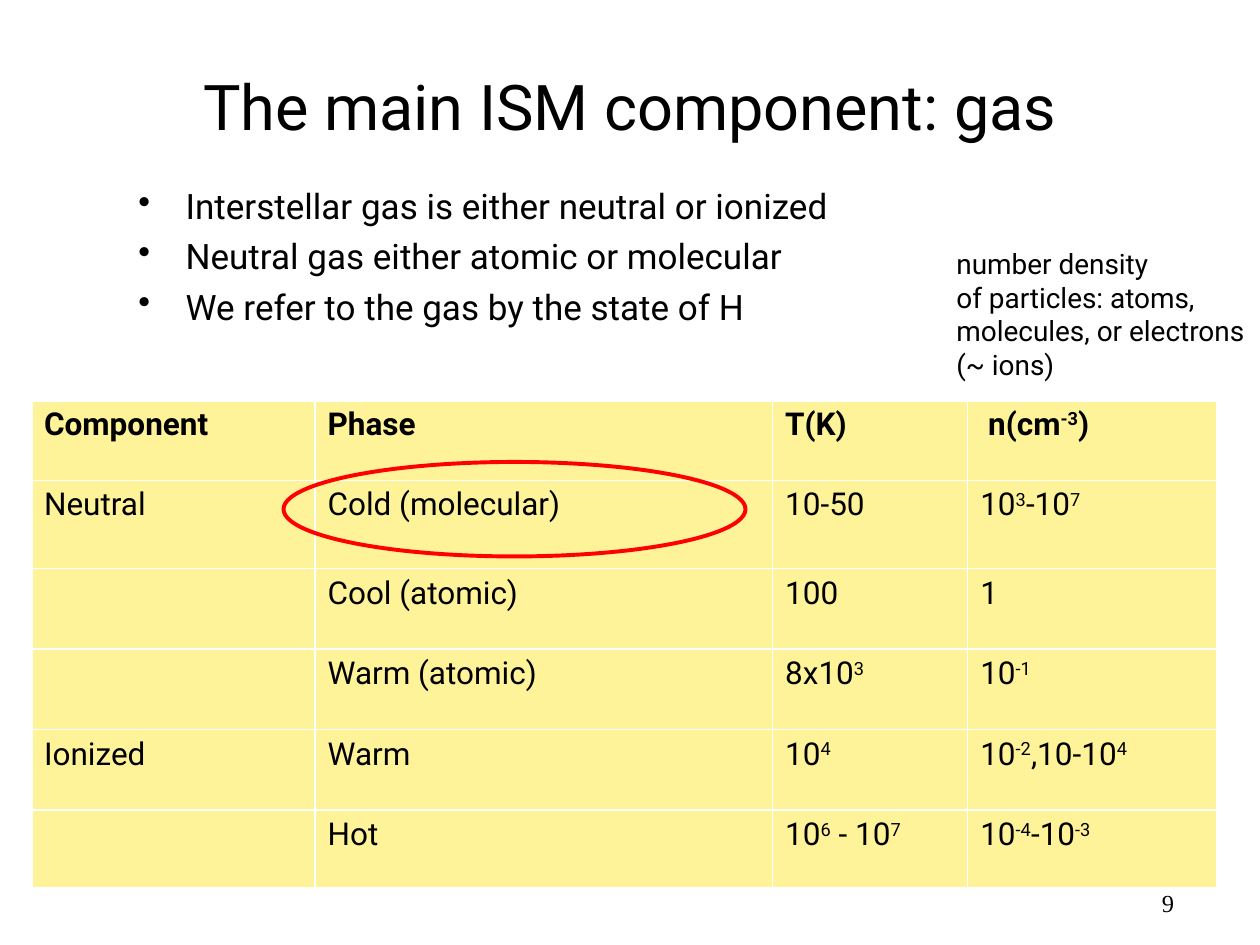
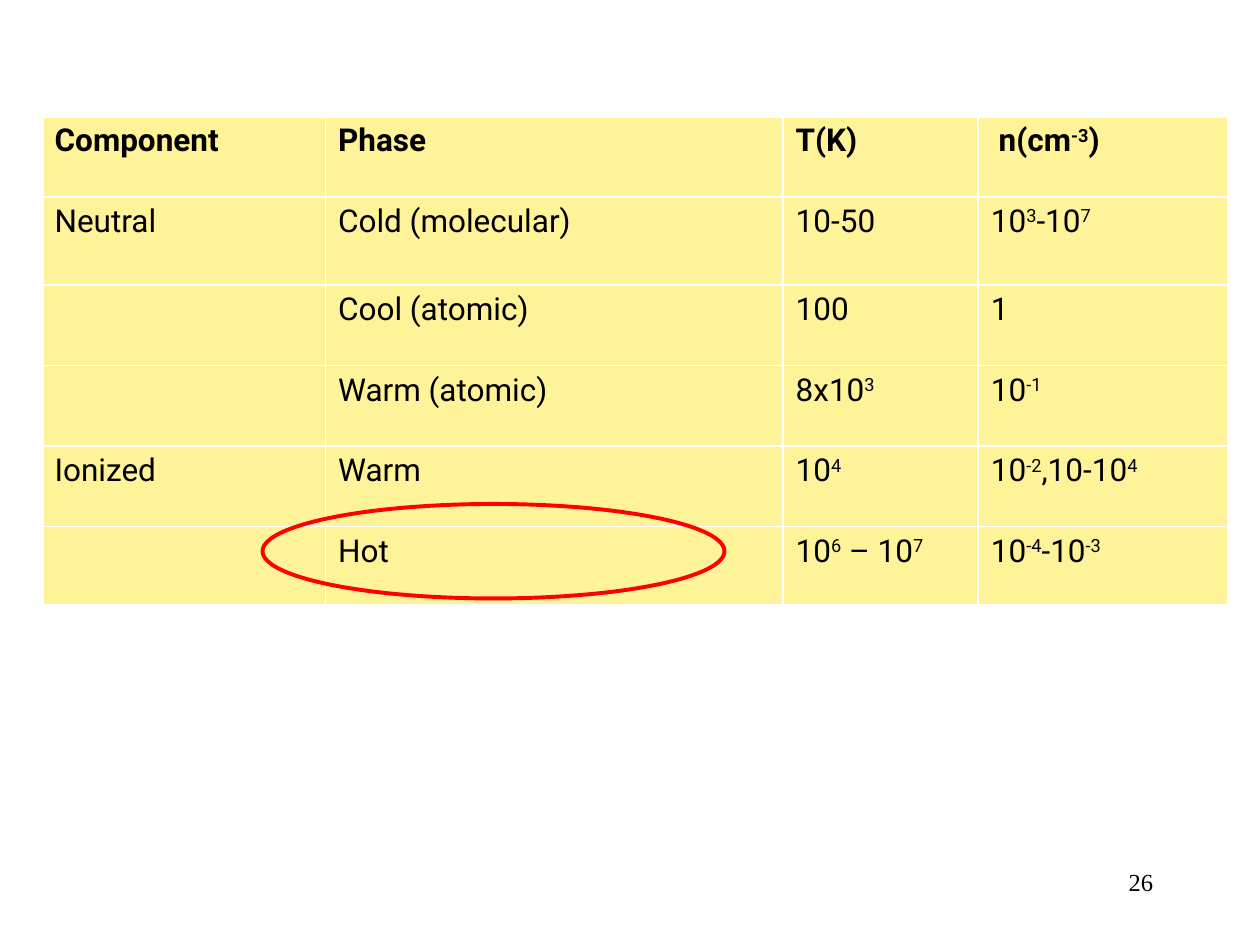
from lxml import etree
from pptx import Presentation
from pptx.dml.color import RGBColor
from pptx.enum import shapes, text
from pptx.oxml import ns
from pptx.util import Pt

COLOURS = {"ink": "000000", "cell": "FFF399", "grid": "FFFFFF", "ring": "FF0000"}
COLUMN_WIDTHS = [162, 261.5, 111.5, 143]
ROW_HEIGHTS = [46, 50.5, 46, 46, 46, 45]
RING_SIZE = (264, 54)
NUMBER_SIZE = (150, 36)
TITLE_ONLY, BLANK = 5, 6


def write(frame, content, size=18, font="Roboto", bold=False, align=text.PP_ALIGN.LEFT,
          before=0, bullet=None, wrap=True):
    """Write one paragraph per line; text between a pair of ^ is superscript."""
    frame.word_wrap = wrap
    for index, line in enumerate(content.split("\n")):
        paragraph = frame.add_paragraph() if index else frame.paragraphs[0]
        paragraph.alignment = align
        paragraph.space_before = Pt(before)
        if bullet:
            properties = paragraph._p.get_or_add_pPr()
            properties.set("marL", str(Pt(27)))
            properties.set("indent", str(Pt(-27)))
            etree.SubElement(properties, ns.qn("a:buChar"), char=bullet)
        for part, words in enumerate(line.split("^")):
            if not words:
                continue
            run = paragraph.add_run()
            run.text = words
            run.font.size = Pt(size)
            run.font.name = font
            run.font.bold = bold
            run.font.color.rgb = RGBColor.from_string(COLOURS["ink"])
            if part % 2:
                run.font._element.set("baseline", "30000")


def set_borders(cell, widths):
    properties = cell._tc.get_or_add_tcPr()
    for position, (side, width) in enumerate(widths.items()):
        line = etree.Element(ns.qn(f"a:ln{side}"), w=str(Pt(width)))
        fill = etree.SubElement(line, ns.qn("a:solidFill"))
        etree.SubElement(fill, ns.qn("a:srgbClr"), val=COLOURS["grid"])
        properties.insert(position, line)


presentation = Presentation()
presentation.slide_width, presentation.slide_height = Pt(720), Pt(540)

# What differs between the slides: layout, dash, positions and page number
pages = [
    dict(layout=TITLE_ONLY, dash="-", table=(18, 228.5), ring=(162, 264),
         number="9", number_at=(528, 504)),
    dict(layout=BLANK, dash="–", table=(24, 66.5), ring=(150, 288),
         number="26", number_at=(516, 492)),
]

for page in pages:
    slide = presentation.slides.add_slide(presentation.slide_layouts[page["layout"]])

    # Table of gas phases
    phases = [
        ["Component", "Phase", "T(K)", " n(cm^-3^)"],
        ["Neutral", "Cold (molecular)", "10-50", "10^3^-10^7^"],
        ["", "Cool (atomic)", "100", "1"],
        ["", "Warm (atomic)", "8x10^3^", "10^-1^"],
        ["Ionized", "Warm", "10^4^", "10^-2^,10-10^4^"],
        ["", "Hot", f"10^6^ {page['dash']} 10^7^", "10^-4^-10^-3^"],
    ]
    left, top = page["table"]
    table = slide.shapes.add_table(
        len(ROW_HEIGHTS), len(COLUMN_WIDTHS), Pt(left), Pt(top),
        Pt(sum(COLUMN_WIDTHS)), Pt(sum(ROW_HEIGHTS))).table
    table.first_row = table.horz_banding = False
    for column, width in zip(table.columns, COLUMN_WIDTHS):
        column.width = Pt(width)
    last_row, last_column = len(ROW_HEIGHTS) - 1, len(COLUMN_WIDTHS) - 1
    for r, height in enumerate(ROW_HEIGHTS):
        table.rows[r].height = Pt(height)
        for c, words in enumerate(phases[r]):
            cell = table.cell(r, c)
            cell.fill.solid()
            cell.fill.fore_color.rgb = RGBColor.from_string(COLOURS["cell"])
            write(cell.text_frame, words, bold=r == 0, before=4.2)
            outer = {"L": c == 0, "R": c == last_column, "T": r == 0, "B": r == last_row}
            set_borders(cell, {side: 2.25 if edge else 1 for side, edge in outer.items()})

    # Ring around the phase under discussion
    ring = slide.shapes.add_shape(
        shapes.MSO_SHAPE.OVAL, *map(Pt, page["ring"] + RING_SIZE))
    ring.shadow.inherit = False
    ring.fill.background()
    ring.line.color.rgb = RGBColor.from_string(COLOURS["ring"])
    ring.line.width = Pt(2.25)

    number_box = slide.shapes.add_textbox(*map(Pt, page["number_at"] + NUMBER_SIZE))
    write(number_box.text_frame, page["number"], size=14, font="Times New Roman",
          align=text.PP_ALIGN.RIGHT)

# Title and notes of the first slide
slide = presentation.slides[0]
title = slide.shapes.title
title.left, title.top, title.width, title.height = map(Pt, (54, 24, 612, 72))
title.text_frame.vertical_anchor = text.MSO_ANCHOR.MIDDLE
write(title.text_frame, "The main ISM component: gas", size=36, align=text.PP_ALIGN.CENTER)

gas_facts = slide.shapes.add_textbox(*map(Pt, (72, 102, 618, 108)))
write(gas_facts.text_frame,
      "Interstellar gas is either neutral or ionized\n"
      "Neutral gas either atomic or molecular\n"
      "We refer to the gas by the state of H",
      size=20, before=4.7, bullet="•")

density_note = slide.shapes.add_textbox(*map(Pt, (539.5, 137.5, 180.5, 85)))
write(density_note.text_frame,
      "number density\nof particles: atoms,\nmolecules, or electrons\n(~ ions)",
      size=16, wrap=False)

presentation.save("out.pptx")
